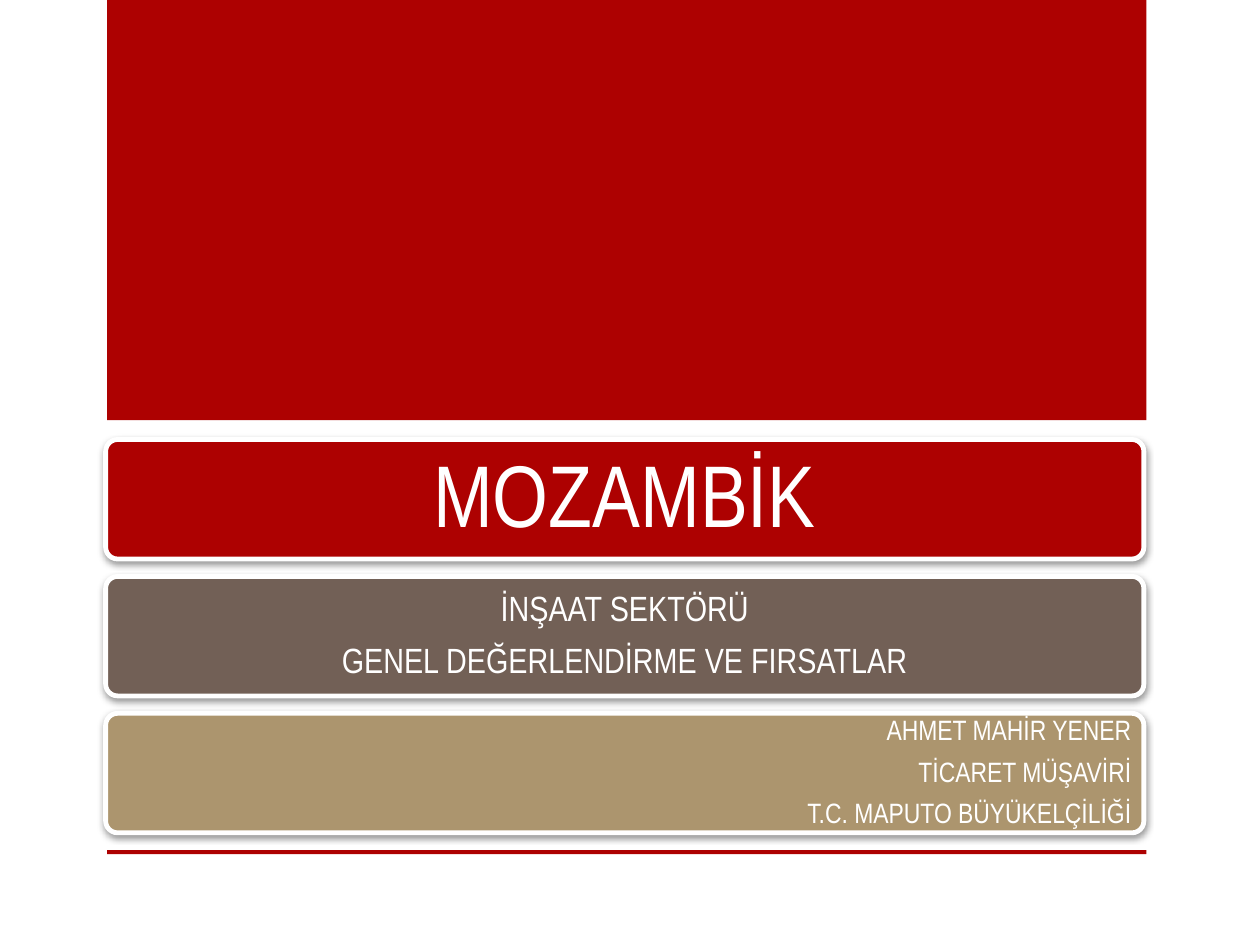
"""Build the title slide on the construction sector in Mozambique."""
from lxml.etree import SubElement
from pptx import Presentation
from pptx.dml.color import RGBColor
from pptx.enum.shapes import MSO_SHAPE as Shape
from pptx.enum.text import MSO_ANCHOR as Anchor, PP_ALIGN as Align
from pptx.oxml.ns import qn
from pptx.util import Cm, Pt

RED = RGBColor(0xAD, 0x01, 0x01)
BROWN = RGBColor(0x72, 0x60, 0x56)
SAND = RGBColor(0xAC, 0x95, 0x6E)
WHITE = RGBColor(0xFF, 0xFF, 0xFF)
PANELS = [
    (RED, 50, 0.53, Align.CENTER, ["MOZAMBİK"]),
    (BROWN, 20, 0.2, Align.CENTER,
     ["İNŞAAT SEKTÖRÜ", "GENEL DEĞERLENDİRME VE FIRSATLAR"]),
    (SAND, 16, 0.18, Align.RIGHT,
     ["AHMET MAHİR YENER", "TİCARET MÜŞAVİRİ", "T.C. MAPUTO BÜYÜKELÇİLİĞİ"]),
]


class SlideBuilder:
    def __init__(self, page, font="Arial Narrow"):
        self.page = page
        self.font = font

    def block(self, kind, left, top, width, height, color):
        box = self.page.shapes.add_shape(kind, Cm(left), Cm(top), Cm(width), Cm(height))
        box.shadow.inherit = False
        box.fill.solid()
        box.fill.fore_color.rgb = color
        box.line.fill.background()
        return box

    def drop_shadow(self, box):
        effects = box._element.spPr.find(qn("a:effectLst"))
        shadow = SubElement(effects, qn("a:outerShdw"), blurRad="50800", dist="15875",
                            dir="5280000", rotWithShape="0")
        color = SubElement(shadow, qn("a:srgbClr"), val="000000")
        SubElement(color, qn("a:alpha"), val="40000")

    def panel(self, top, color, size, inset, align, lines):
        box = self.block(Shape.ROUNDED_RECTANGLE, 2.13, top, 20.93, 2.41, color)
        box.adjustments[0] = 0.1
        box.line.color.rgb = WHITE
        box.line.width = Pt(2.75)
        self.drop_shadow(box)
        frame = box.text_frame
        frame.word_wrap = True
        frame.vertical_anchor = Anchor.MIDDLE
        frame.margin_left = frame.margin_right = Cm(inset)
        frame.margin_top = frame.margin_bottom = Cm(inset)
        frame.text = "\n".join(lines)
        for para in frame.paragraphs:
            para.alignment = align
            para.line_spacing = 0.9
            para.space_after = Pt(0.4 * size)
            para.font.name = self.font
            para.font.size = Pt(size)
            para.font.color.rgb = WHITE


def main():
    deck = Presentation()
    deck.slide_width, deck.slide_height = Cm(25.4), Cm(19.05)
    builder = SlideBuilder(deck.slides.add_slide(deck.slide_layouts[6]))
    for top, height in ((0, 8.47), (17.14, 0.08)):
        builder.block(Shape.RECTANGLE, 2.16, top, 20.95, height, RED)
    for row, panel in enumerate(PANELS):
        builder.panel(8.86 + 2.76 * row, *panel)
    deck.save("out.pptx")


if __name__ == "__main__":
    main()
